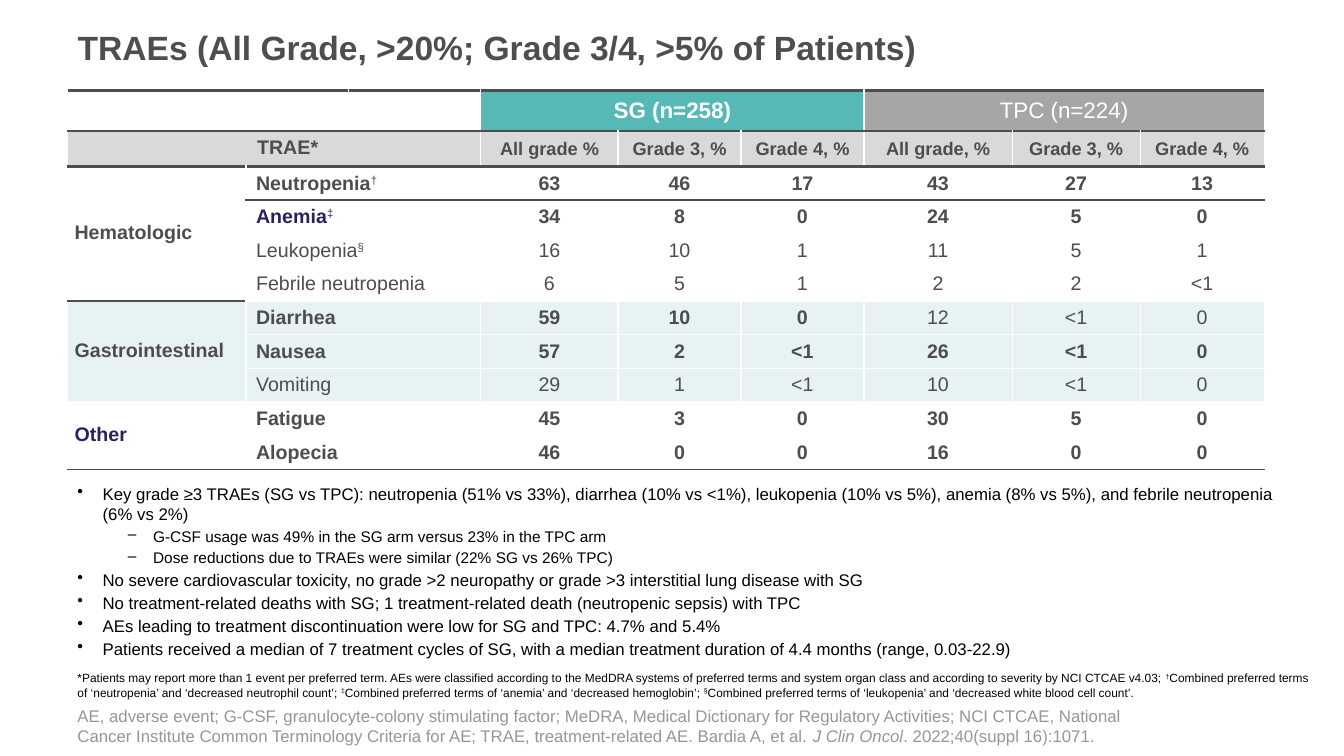
from lxml import etree
from pptx import Presentation, util as u
from pptx.dml.color import RGBColor
from pptx.enum import text
from pptx.oxml import ns

DARK, NAVY, WHITE, GREY, MINT = "4D4D4D", "262261", "FFFFFF", "D9D9D9", "E7F3F3"
COLS = [1.77, 1.02, 1.31, 1.36, 1.22, 1.22, 1.47, 1.27, 1.23]
ROWS = [0.33, 0.32] + [0.3] * 9
HEADS = ["All grade %", "Grade 3, %", "Grade 4, %", "All grade, %", "Grade 3, %", "Grade 4, %"]
GROUPS = [
    ("Hematologic", DARK, None, [
        ("Neutropenia^†", "63 46 17 43 27 13", 6),
        ("Anemia^‡", "34 8 0 24 5 0", 6),
        ("Leukopenia^§", "16 10 1 11 5 1", 0),
        ("Febrile neutropenia", "6 5 1 2 2 <1", 0)]),
    ("Gastrointestinal", DARK, MINT, [
        ("Diarrhea", "59 10 0 12 <1 0", 3),
        ("Nausea", "57 2 <1 26 <1 0", 6),
        ("Vomiting", "29 1 <1 10 <1 0", 0)]),
    ("Other", NAVY, WHITE, [
        ("Fatigue", "45 3 0 30 5 0", 6),
        ("Alopecia", "46 0 0 16 0 0", 6)]),
]
POINTS = [
    (0, "Key grade ≥3 TRAEs (SG vs TPC): neutropenia (51% vs 33%), diarrhea (10% vs <1%), leukopenia (10% vs 5%), "
        "anemia (8% vs 5%), and febrile neutropenia (6% vs 2%)"),
    (1, "G-CSF usage was 49% in the SG arm versus 23% in the TPC arm"),
    (1, "Dose reductions due to TRAEs were similar (22% SG vs 26% TPC)"),
    (0, "No severe cardiovascular toxicity, no grade >2 neuropathy or grade >3 interstitial lung disease with SG"),
    (0, "No treatment-related deaths with SG; 1 treatment-related death (neutropenic sepsis) with TPC"),
    (0, "AEs leading to treatment discontinuation were low for SG and TPC: 4.7% and 5.4%"),
    (0, "Patients received a median of 7 treatment cycles of SG, with a median treatment duration of 4.4 months "
        "(range, 0.03-22.9)"),
]
NOTE = ("*Patients may report more than 1 event per preferred term. AEs were classified according to the MedDRA systems "
        "of preferred terms and system organ class and according to severity by NCI CTCAE v4.03; ^†^Combined preferred "
        "terms of ‘neutropenia’ and ‘decreased neutrophil count’; ^‡^Combined preferred terms of ‘anemia’ and "
        "‘decreased hemoglobin’; ^§^Combined preferred terms of ‘leukopenia’ and ‘decreased white blood cell count’.")
CITE = ("AE, adverse event; G-CSF, granulocyte-colony stimulating factor; MeDRA, Medical Dictionary for Regulatory "
        "Activities; NCI CTCAE, National Cancer Institute Common Terminology Criteria for AE; TRAE, treatment-related AE. "
        "Bardia A, et al. ^J Clin Oncol^. 2022;40(suppl 16):1071.")


def color(code):
    """Turn a hex string into a colour."""
    return RGBColor.from_string(code)


def write(par, words, size, tint, bold=False, italic=False):
    """Fill a paragraph; parts between carets are raised or italic."""
    font = par.font
    font.name, font.size, font.bold = "Arial", u.Pt(size), bold
    font.color.rgb = color(tint)
    for i, part in enumerate(words.split("^")):
        run = par.add_run()
        run.text = part
        if i % 2 and italic:
            run.font.italic = True
        elif i % 2:
            run.font.bold = False
            run._r.get_or_add_rPr().set("baseline", "30000")


def indent(par, left, first):
    """Set the left margin and first-line indent of a paragraph."""
    props = par._p.get_or_add_pPr()
    props.set("marL", str(u.Inches(left)))
    props.set("indent", str(u.Inches(first)))
    return props


def place(shape, left, top, width, height):
    """Put a shape in its place."""
    shape.left, shape.top = u.Inches(left), u.Inches(top)
    shape.width, shape.height = u.Inches(width), u.Inches(height)


def box(slide, *spot):
    """Add a wrapping text box and return its frame."""
    frame = slide.shapes.add_textbox(*map(u.Inches, spot)).text_frame
    frame.word_wrap = True
    return frame


def edge(row, col):
    """Return the colour and width of the line below a cell."""
    if row < 2 or row == 2 and col:
        return DARK, 2.25
    if row == 5 and col == 0:
        return DARK, 1.5
    return (DARK if row == len(ROWS) - 1 else WHITE), 1


def border(cell, row, col):
    """Draw the four lines around a cell."""
    last = row + (cell.span_height if cell.is_merge_origin else 1) - 1
    side = WHITE, 1
    lines = {"L": side, "R": side, "T": edge(row - 1, col), "B": edge(last, col)}
    for name, (tint, width) in lines.items():
        line = etree.SubElement(cell._tc.get_or_add_tcPr(), ns.qn("a:ln" + name), w=str(u.Pt(width)))
        fill = etree.SubElement(line, ns.qn("a:solidFill"))
        etree.SubElement(fill, ns.qn("a:srgbClr"), val=tint)


def paint(cell, fill):
    """Fill a cell, or leave it clear."""
    if fill:
        cell.fill.solid()
        cell.fill.fore_color.rgb = color(fill)
    else:
        cell.fill.background()


def label(cell, words, size=14, tint=DARK, bold=True, align=text.PP_ALIGN.CENTER):
    """Write one line in a cell."""
    cell.vertical_anchor = text.MSO_ANCHOR.MIDDLE
    par = cell.text_frame.paragraphs[0]
    par.alignment = align
    write(par, words, size, tint, bold)
    return par


def side(cell, words, tint=DARK):
    """Write a left-hand heading with its own margins."""
    cell.margin_left = cell.margin_top = cell.margin_bottom = u.Inches(0.07)
    cell.margin_right = u.Inches(0.13)
    par = label(cell, words, tint=tint, align=text.PP_ALIGN.LEFT)
    par.line_spacing, par.space_after = 0.9, u.Pt(3)
    return par


def grid(slide):
    """Add the table of adverse events."""
    spot = map(u.Inches, (0.67, 0.9, sum(COLS), sum(ROWS)))
    table = slide.shapes.add_table(len(ROWS), len(COLS), *spot).table
    table.first_row = table.horz_banding = False
    for col, width in zip(table.columns, COLS):
        col.width = u.Inches(width)
    for row, height in zip(table.rows, ROWS):
        row.height = u.Inches(height)
    cell = table.cell
    fills = [None, GREY] + [fill for _, _, fill, rows in GROUPS for _ in rows]

    for row, left, right in [(0, 0, 1), (0, 3, 5), (0, 6, 8), (1, 0, 2)]:
        cell(row, left).merge(cell(row, right))
    start = 2
    for name, tint, _, rows in GROUPS:
        cell(start, 0).merge(cell(start + len(rows) - 1, 0))
        side(cell(start, 0), name, tint)
        for r, (term, values, strong) in enumerate(rows, start):
            cell(r, 1).merge(cell(r, 2))
            tint = NAVY if term.startswith("Anemia") else DARK
            label(cell(r, 1), term, tint=tint, bold=strong > 0, align=text.PP_ALIGN.LEFT)
            for i, value in enumerate(values.split()):
                label(cell(r, i + 3), value, bold=i < strong)
        start += len(rows)

    for r, fill in enumerate(fills):
        for c in range(len(COLS)):
            border(cell(r, c), r, c)
            paint(cell(r, c), fill)
    for c, arm, fill in [(3, "SG (n=258)", "57B9B5"), (6, "TPC (n=224)", "A6A6A6")]:
        label(cell(0, c), arm, 16, WHITE, c == 3)
        for i in range(3):
            paint(cell(0, c + i), fill)
    indent(side(cell(1, 0), "TRAE*"), 1.75, 0.06)
    for c, head in enumerate(HEADS, 3):
        label(cell(1, c), head, 13)


def bullets(slide):
    """Add the key points."""
    frame = box(slide, 0.67, 4.75, 12.3, 1.71)
    for i, (level, words) in enumerate(POINTS):
        par = frame.add_paragraph() if i else frame.paragraphs[0]
        par.level, par.space_after = level, u.Pt(2)
        props = indent(par, 0.25 + level / 2, -0.25)
        etree.SubElement(props, ns.qn("a:buChar"), char="•–"[level])
        write(par, words, 12 - level, "000000")


def main():
    """Build the slide and save it."""
    deck = Presentation()
    deck.slide_width, deck.slide_height = u.Inches(13.33), u.Inches(7.5)
    slide = deck.slides.add_slide(deck.slide_layouts[5])
    bullets(slide)
    grid(slide)
    title = slide.shapes.title
    place(title, 0.67, 0.22, 11.75, 1.3)
    frame = title.text_frame
    frame.auto_size, frame.vertical_anchor = text.MSO_AUTO_SIZE.NONE, text.MSO_ANCHOR.TOP
    frame.paragraphs[0].alignment = text.PP_ALIGN.LEFT
    write(frame.paragraphs[0], "TRAEs (All Grade, >20%; Grade 3/4, >5% of Patients)", 24, "4D4E4D", True)
    note = box(slide, 0.67, 6.58, 12.52, 0.41)
    note.vertical_anchor = text.MSO_ANCHOR.BOTTOM
    write(note.paragraphs[0], NOTE, 8.5, "000000")
    write(box(slide, 0.67, 6.95, 10.97, 0.48).paragraphs[0], CITE, 12, "969696", italic=True)
    deck.save("out.pptx")


if __name__ == "__main__":
    main()
